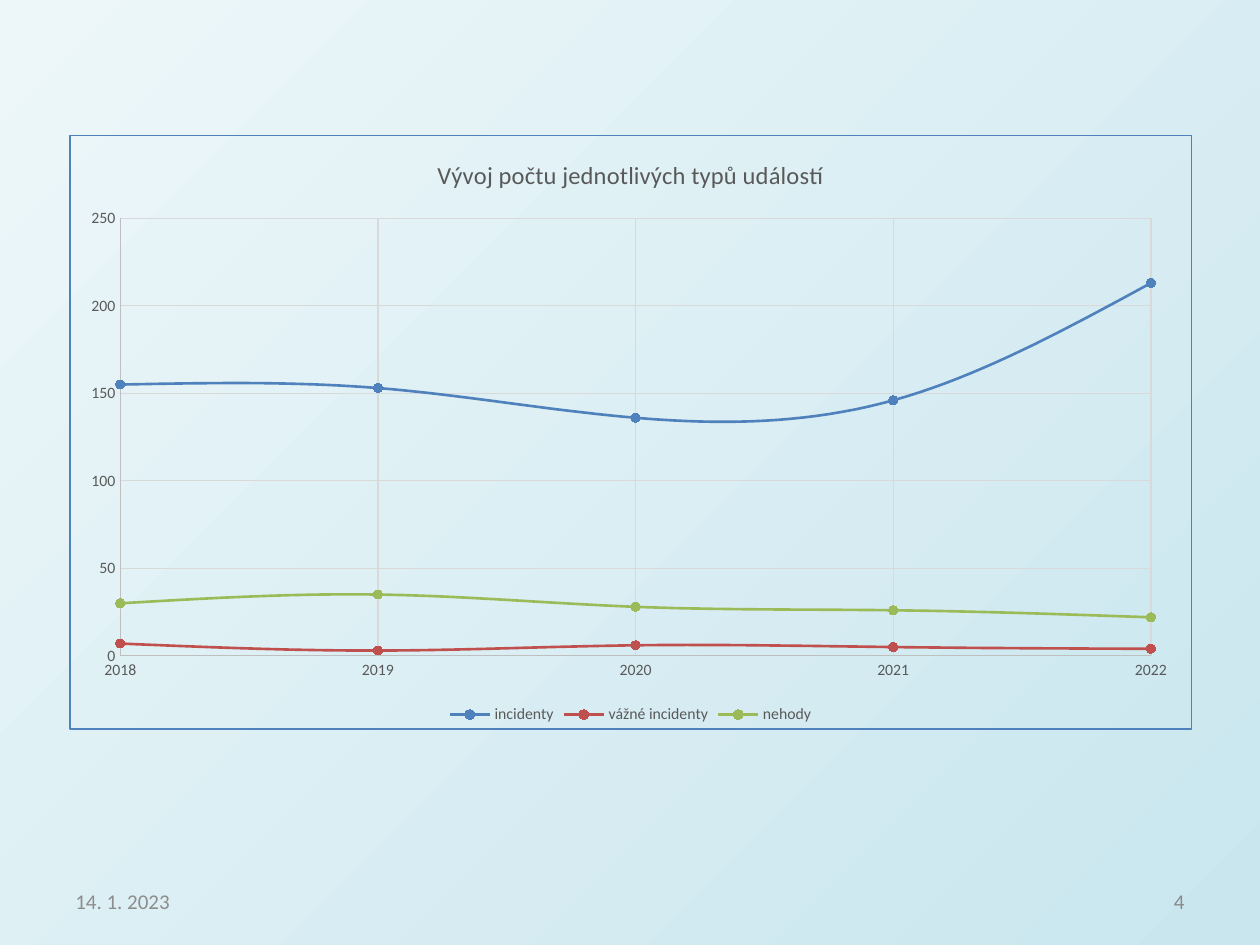
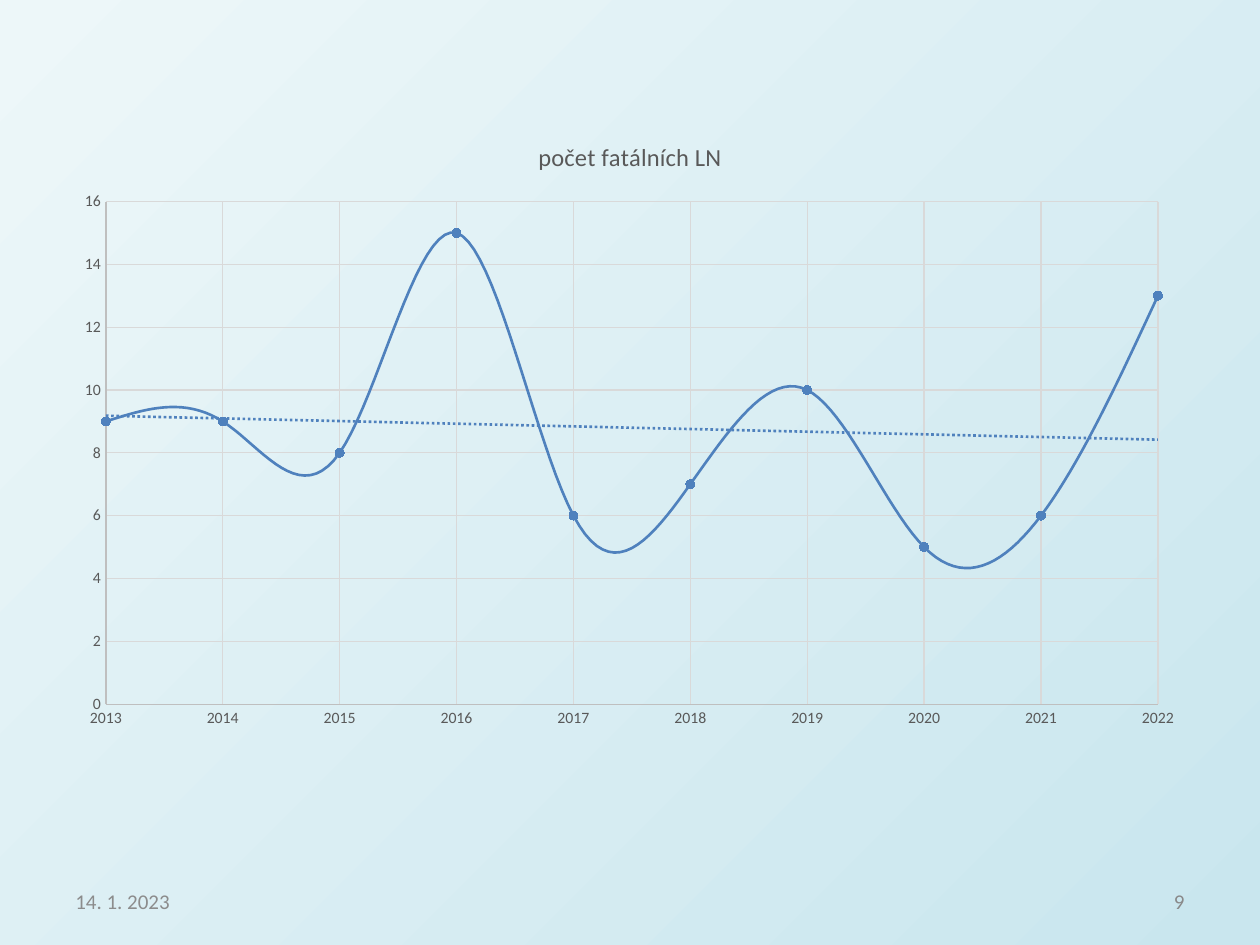
"""Build two slides with smooth scatter charts of yearly event counts."""
from dataclasses import dataclass

from pptx import Presentation
from pptx.chart.data import XyChartData
from pptx.dml.color import RGBColor
from pptx.enum.chart import XL_CHART_TYPE, XL_LEGEND_POSITION, XL_MARKER_STYLE, XL_TICK_MARK
from pptx.enum.text import MSO_ANCHOR, PP_ALIGN
from pptx.oxml import parse_xml
from pptx.oxml.ns import nsdecls, qn
from pptx.util import Inches, Pt

SMOOTH = XL_CHART_TYPE.XY_SCATTER_SMOOTH
BOTTOM = XL_LEGEND_POSITION.BOTTOM
CIRCLE = XL_MARKER_STYLE.CIRCLE
NO_TICK = XL_TICK_MARK.NONE
MIDDLE = MSO_ANCHOR.MIDDLE
LEFT, RIGHT = PP_ALIGN.LEFT, PP_ALIGN.RIGHT

DATE = "14. 1. 2023"
SLIDES = [
    {
        "page": "4",
        "title": "Vývoj počtu jednotlivých typů událostí",
        "years": (2018, 2022),
        "rows": {
            "incidenty": [213, 146, 136, 153, 155],
            "vážné incidenty": [4, 5, 6, 3, 7],
            "nehody": [22, 26, 28, 35, 30],
        },
        "box": (0.55, 1.07, 8.91, 4.72),
        "plot": (0.95, 1.73, 8.19, 3.48),
        "legend": True,
        "frame": True,
        "trend": False,
    },
    {
        "page": "9",
        "title": "počet fatálních LN",
        "years": (2013, 2022),
        "rows": {"počet fatálních LN": [13, 6, 5, 10, 7, 6, 15, 8, 9, 9]},
        "box": (0.5, 0.92, 9, 4.96),
        "plot": (0.84, 1.6, 8.35, 3.99),
        "legend": False,
        "frame": False,
        "trend": True,
    },
]


@dataclass(frozen=True)
class Theme:
    """Colours, font and type sizes shared by the slides."""
    face: str = "Calibri"
    back: tuple = ("EDF7F9", "C9E6EE")
    lines: tuple = ("4F81BD", "C0504D", "9BBB59")
    ink: str = "595959"
    date: str = "8C8C8C"
    page: str = "898989"
    axis: str = "BFBFBF"
    grid: str = "D9D9D9"
    head: int = 14
    foot: int = 12
    label: int = 9
    thin: float = 0.75
    thick: float = 1.5


THEME = Theme()
WIDE, HIGH = 10, 7.5
EDGE, FOOT_W = 0.05 * WIDE, 2.33
FOOT_TOP, FOOT_H = 6.95, 0.4
FOOTS = [
    ("date", EDGE, LEFT, THEME.date),
    ("page", WIDE - EDGE - FOOT_W, RIGHT, THEME.page),
]


def put(item, **values):
    """Set each named attribute on an item."""
    for name, value in values.items():
        setattr(item, name, value)


def set_font(font, size, tint):
    """Give a font the shared face, a size and a colour."""
    put(font, name=THEME.face, size=Pt(size), bold=False)
    font.color.rgb = RGBColor.from_string(tint)


def set_line(line, width, tint):
    """Give a line a width and a colour."""
    line.width = Pt(width)
    line.color.rgb = RGBColor.from_string(tint)


def line_xml(width, tint, dash="solid"):
    """Return the markup of one outline."""
    return (f'<a:ln w="{Pt(width)}"><a:solidFill><a:srgbClr val="{tint}"/></a:solidFill>'
            f'<a:prstDash val="{dash}"/></a:ln>')


def clear_xml(line="<a:ln><a:noFill/></a:ln>"):
    """Return an unfilled shape format with an outline."""
    return parse_xml(f'<c:spPr {nsdecls("c", "a")}><a:noFill/>{line}</c:spPr>')


def set_back(slide):
    """Fill the slide with a diagonal gradient."""
    fill = slide.background.fill
    fill.gradient()
    fill.gradient_angle = 315
    for stop, tint in zip(fill.gradient_stops, THEME.back):
        stop.color.rgb = RGBColor.from_string(tint)


def add_foot(slide, page):
    """Add the date and the page number."""
    words = {"date": DATE, "page": page}
    for key, left, align, tint in FOOTS:
        box = slide.shapes.add_textbox(*map(Inches, (left, FOOT_TOP, FOOT_W, FOOT_H)))
        put(box.text_frame, word_wrap=True, vertical_anchor=MIDDLE)
        para = box.text_frame.paragraphs[0]
        para.alignment = align
        run = para.add_run()
        run.text = words[key]
        set_font(run.font, THEME.foot, tint)


def set_axes(chart, years):
    """Format both axes and fix the span of years."""
    first, last = years
    put(chart.category_axis, minimum_scale=first, maximum_scale=last, major_unit=1)
    for axis in (chart.category_axis, chart.value_axis):
        put(axis, has_major_gridlines=True, major_tick_mark=NO_TICK, minor_tick_mark=NO_TICK)
        set_line(axis.major_gridlines.format.line, THEME.thin, THEME.grid)
        set_line(axis.format.line, THEME.thin, THEME.axis)
        set_font(axis.tick_labels.font, THEME.label, THEME.ink)


def set_rows(chart):
    """Colour the series and their round markers."""
    for row, tint in zip(chart.plots[0].series, THEME.lines):
        set_line(row.format.line, THEME.thick, tint)
        put(row.marker, style=CIRCLE, size=5)
        look = row.marker.format
        look.fill.solid()
        look.fill.fore_color.rgb = RGBColor.from_string(tint)
        set_line(look.line, THEME.thin, tint)
    for mark in chart.element.iter(qn("c:smooth")):
        mark.set("val", "1")


def set_plot(chart, info):
    """Place the plot area and set the chart's fill and frame."""
    area = chart.element.find(".//" + qn("c:plotArea"))
    for old in area.findall(qn("c:layout")):
        area.remove(old)
    left, top, width, height = info["box"]
    x, y, w, h = info["plot"]
    shares = {"x": (x - left) / width, "y": (y - top) / height, "w": w / width, "h": h / height}
    modes = "".join(f'<c:{key}Mode val="edge"/>' for key in "xy")
    sizes = "".join(f'<c:{key} val="{share:.4f}"/>' for key, share in shares.items())
    area.insert(0, parse_xml(
        f'<c:layout {nsdecls("c")}><c:manualLayout><c:layoutTarget val="inner"/>'
        f'{modes}{sizes}</c:manualLayout></c:layout>'))
    area.append(clear_xml())
    frame = [line_xml(THEME.thin, THEME.lines[0])] if info["frame"] else []
    chart.element.find(qn("c:chart")).addnext(clear_xml(*frame))


def add_trend(chart):
    """Add a dotted linear trend to the first series."""
    line = line_xml(THEME.thick, THEME.lines[0], "sysDot")
    chart.element.find(".//" + qn("c:xVal")).addprevious(parse_xml(
        f'<c:trendline {nsdecls("c", "a")}><c:spPr>{line}</c:spPr>'
        '<c:trendlineType val="linear"/><c:dispRSqr val="0"/><c:dispEq val="0"/></c:trendline>'))


def add_chart(slide, info):
    """Add the scatter chart of one slide."""
    first, last = info["years"]
    data = XyChartData()
    for name, counts in info["rows"].items():
        row = data.add_series(name)
        for year, count in zip(range(last, first - 1, -1), counts):
            row.add_data_point(year, count)
    chart = slide.shapes.add_chart(SMOOTH, *map(Inches, info["box"]), data).chart
    set_font(chart.font, 10, "000000")
    put(chart, has_title=True, has_legend=info["legend"])
    chart.plots[0].vary_by_categories = False
    run = chart.chart_title.text_frame.paragraphs[0].add_run()
    run.text = info["title"]
    set_font(run.font, THEME.head, THEME.ink)
    if info["legend"]:
        put(chart.legend, position=BOTTOM, include_in_layout=False)
        set_font(chart.legend.font, THEME.label, THEME.ink)
    set_axes(chart, info["years"])
    set_rows(chart)
    set_plot(chart, info)
    if info["trend"]:
        add_trend(chart)


def main():
    """Build and save the deck."""
    deck = Presentation()
    put(deck, slide_width=Inches(WIDE), slide_height=Inches(HIGH))
    for info in SLIDES:
        slide = deck.slides.add_slide(deck.slide_layouts[6])
        set_back(slide)
        add_foot(slide, info["page"])
        add_chart(slide, info)
    deck.save("out.pptx")


if __name__ == "__main__":
    main()
